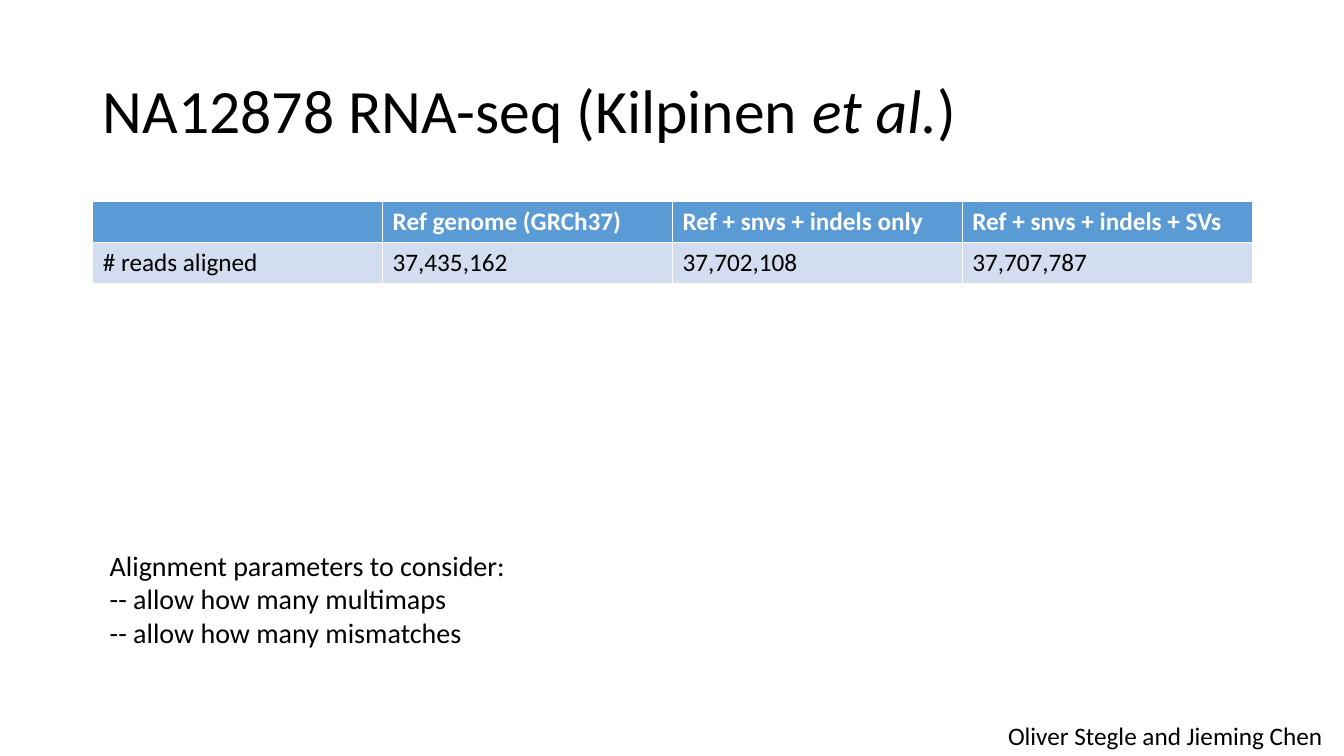
"""Build the NA12878 RNA-seq alignment slide."""
import dataclasses

import pptx
import pptx.dml.color
import pptx.enum.text
import pptx.slide
import pptx.text.text
import pptx.util

Inches = pptx.util.Inches
RGBColor = pptx.dml.color.RGBColor
Align = pptx.enum.text.PP_ALIGN
Anchor = pptx.enum.text.MSO_ANCHOR
AutoSize = pptx.enum.text.MSO_AUTO_SIZE

BLACK = RGBColor(0x00, 0x00, 0x00)
WHITE = RGBColor(0xFF, 0xFF, 0xFF)
HEADER_BLUE = RGBColor(0x5B, 0x9B, 0xD5)
BODY_BLUE = RGBColor(0xD2, 0xDE, 0xEF)

TITLE_RUNS = [("NA12878 RNA-seq (Kilpinen ", False), ("et al.", True), (")", False)]


@dataclasses.dataclass(frozen=True)
class Note:
    lines: tuple[str, ...]
    left: float
    top: float
    width: float
    height: float
    size: int
    wrap: bool


@dataclasses.dataclass(frozen=True)
class ReadsRow:
    cells: tuple[str, ...]
    fill: RGBColor
    color: RGBColor
    bold: bool


NOTES = [
    Note(("Alignment parameters to consider:",
          "-- allow how many multimaps",
          "-- allow how many mismatches"), 0.99, 5.39, 10.23, 1.11, 20, True),
    Note(("Oliver Stegle and Jieming Chen",), 9.9, 7.1, 3.36, 0.4, 18, False),
]
READS_ROWS = [
    ReadsRow(("", "Ref genome (GRCh37)", "Ref + snvs + indels only",
              "Ref + snvs + indels + SVs"), HEADER_BLUE, WHITE, True),
    ReadsRow(("# reads aligned", "37,435,162", "37,702,108", "37,707,787"),
             BODY_BLUE, BLACK, False),
]


def add_run(paragraph: pptx.text.text._Paragraph, text: str, size: int,
            color: RGBColor = BLACK, bold: bool = False, italic: bool = False) -> None:
    run = paragraph.add_run()
    run.text = text
    formats = {"name": "Calibri", "size": pptx.util.Pt(size), "bold": bold, "italic": italic}
    for attribute, value in formats.items():
        setattr(run.font, attribute, value)
    run.font.color.rgb = color


def format_title(slide: pptx.slide.Slide) -> None:
    title = slide.shapes.title
    place = {"left": 0.92, "top": 0.4, "width": 11.5, "height": 1.45}
    for attribute, value in place.items():
        setattr(title, attribute, Inches(value))
    title.text_frame.vertical_anchor = Anchor.MIDDLE
    title.text_frame.auto_size = AutoSize.NONE
    heading = title.text_frame.paragraphs[0]
    heading.alignment = Align.LEFT
    heading.line_spacing = 0.9
    for text, italic in TITLE_RUNS:
        add_run(heading, text, 44, italic=italic)


def add_reads_table(slide: pptx.slide.Slide, rows: list[ReadsRow]) -> None:
    reads = slide.shapes.add_table(
        len(rows), len(rows[0].cells),
        Inches(0.92), Inches(2), Inches(11.5), Inches(0.81)).table
    for row_index, row in enumerate(rows):
        for column_index, text in enumerate(row.cells):
            cell = reads.cell(row_index, column_index)
            cell.fill.solid()
            cell.fill.fore_color.rgb = row.fill
            if text:
                add_run(cell.text_frame.paragraphs[0], text, 18, row.color, row.bold)


def add_note(slide: pptx.slide.Slide, note: Note) -> None:
    frame = slide.shapes.add_textbox(
        Inches(note.left), Inches(note.top),
        Inches(note.width), Inches(note.height)).text_frame
    frame.word_wrap = note.wrap
    frame.auto_size = AutoSize.SHAPE_TO_FIT_TEXT
    for index, line in enumerate(note.lines):
        paragraph = frame.add_paragraph() if index else frame.paragraphs[0]
        add_run(paragraph, line, note.size)


def main() -> None:
    presentation = pptx.Presentation()
    presentation.slide_width = Inches(13.33)
    presentation.slide_height = Inches(7.5)
    slide = presentation.slides.add_slide(presentation.slide_layouts[5])
    format_title(slide)
    add_reads_table(slide, READS_ROWS)
    for note in NOTES:
        add_note(slide, note)
    presentation.save("out.pptx")


if __name__ == "__main__":
    main()
